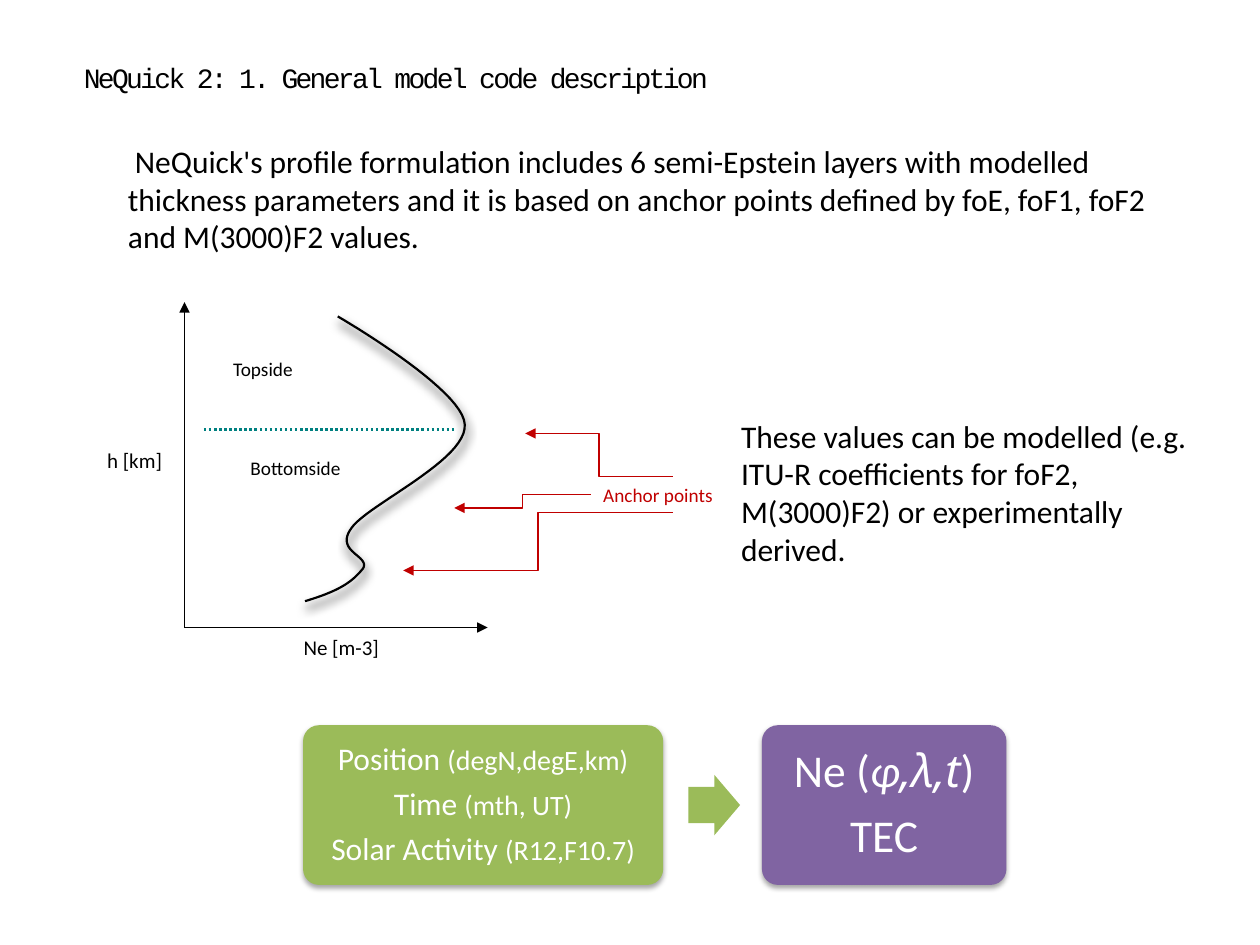
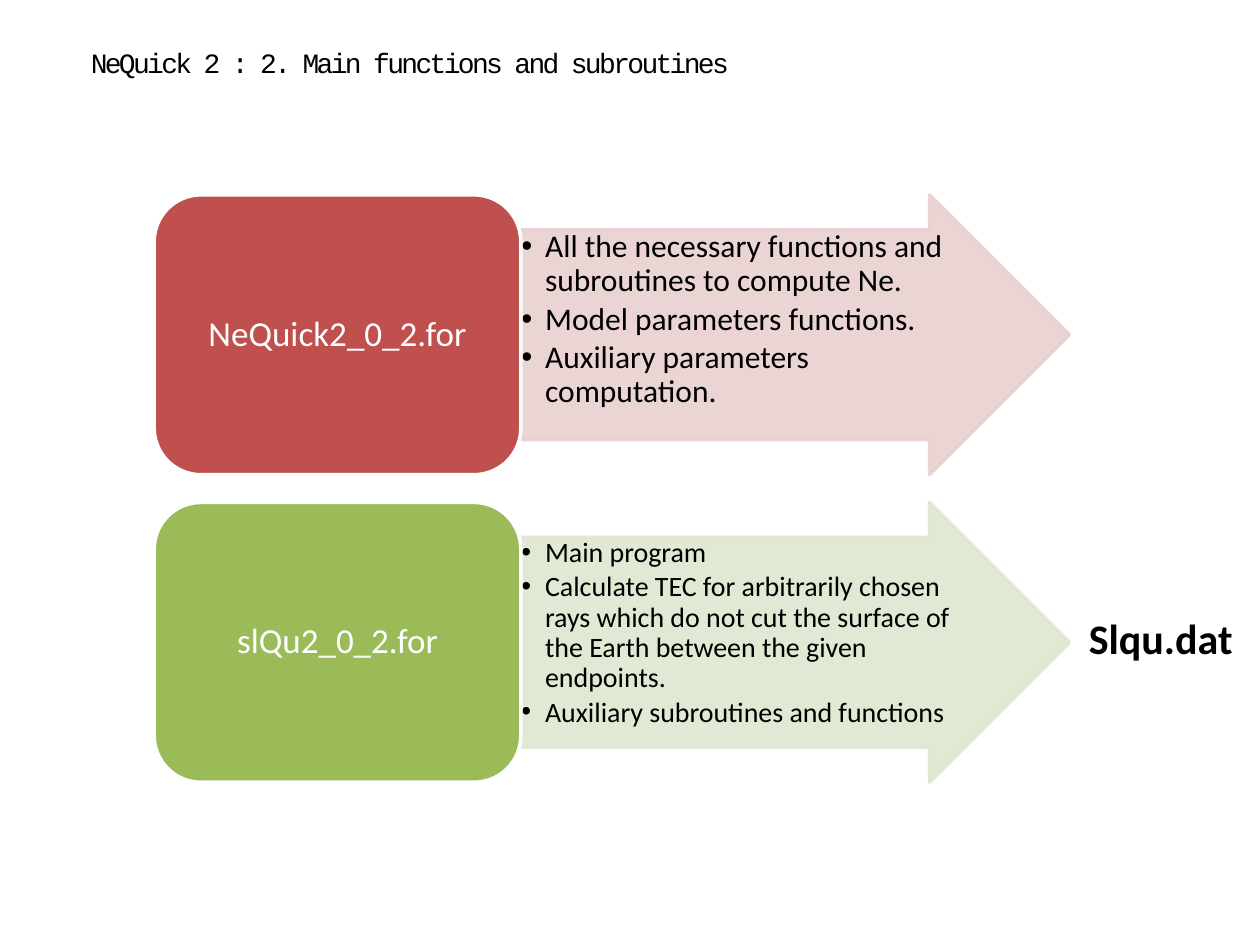
import pptx
import pptx.dml.color
import pptx.enum.dml
import pptx.enum.shapes
import pptx.enum.text
import pptx.oxml
import pptx.oxml.ns
import pptx.util

Cm, Pt = pptx.util.Cm, pptx.util.Pt
SHAPES = pptx.enum.shapes.MSO_SHAPE
CONNECTORS = pptx.enum.shapes.MSO_CONNECTOR
ANCHORS = pptx.enum.text.MSO_ANCHOR
ALIGNMENTS = pptx.enum.text.PP_ALIGN
COLOURS = {
    "black": "000000", "white": "FFFFFF", "anchor": "C00000", "divider": "008080",
    "green": "9BBB59", "purple": "8064A2", "red": "C0504D",
    "pale red": "E8D0D0", "pale green": "DEE7D1",
}
TEXT_INSETS = (0.25, 0.13, 0.25, 0.13)
TITLE_ONLY = 5


def rgb(colour):
    return pptx.dml.color.RGBColor.from_string(COLOURS[colour])


def add_xml(parent, tag, **attributes):
    child = parent.makeelement(pptx.oxml.ns.qn(tag), {})
    for name, value in attributes.items():
        child.set(name, str(value))
    parent.append(child)
    return child


def write(frame, paragraphs, size=18, colour="black", font="Calibri", bold=None,
          align="LEFT", anchor="TOP", insets=TEXT_INSETS, wrap=True, spacing=None,
          after=0, first_indent=0, bullet=False, tracking=None):
    """Fill a text frame; a paragraph is a string or a list of (text, run format) pairs."""
    frame.word_wrap = wrap
    frame.auto_size = pptx.enum.text.MSO_AUTO_SIZE.NONE
    frame.vertical_anchor = ANCHORS[anchor]
    frame.margin_left, frame.margin_top, frame.margin_right, frame.margin_bottom = map(Cm, insets)
    for index, content in enumerate(paragraphs):
        paragraph = frame.add_paragraph() if index else frame.paragraphs[0]
        properties = paragraph._p.get_or_add_pPr()
        if bullet:
            properties.set("marL", str(Cm(0.48)))
            properties.set("indent", str(Cm(-0.48)))
            add_xml(properties, "a:buFont", typeface="Arial")
            add_xml(properties, "a:buChar", char="•")
        elif first_indent:
            properties.set("indent", str(Cm(first_indent)))
        paragraph.alignment = ALIGNMENTS[align]
        paragraph.space_before = Pt(0)
        paragraph.space_after = Pt(after)
        if spacing:
            paragraph.line_spacing = spacing
        for text, run_format in [(content, {})] if isinstance(content, str) else content:
            run = paragraph.add_run()
            run.text = text
            run.font.name = run_format.get("font", font)
            run.font.size = Pt(run_format.get("size", size))
            run.font.italic = run_format.get("italic")
            run.font.bold = bold
            run.font.color.rgb = rgb(colour)
            if tracking:
                run._r.get_or_add_rPr().set("spc", str(tracking))


def add_titled_slide(presentation, title, left, top, width, **text_format):
    slide = presentation.slides.add_slide(presentation.slide_layouts[TITLE_ONLY])
    shape = slide.shapes.title
    shape.left, shape.top, shape.width, shape.height = map(Cm, (left, top, width, 1.63))
    write(shape.text_frame, [title], size=16, font="Courier New", tracking=-150, **text_format)
    return slide


def add_label(slide, paragraphs, left, top, width, height, **text_format):
    box = slide.shapes.add_textbox(*map(Cm, (left, top, width, height)))
    write(box.text_frame, paragraphs, **text_format)


def add_shadow(shape, blur, distance, direction, opacity):
    shape.shadow.inherit = False
    effects = shape._element.spPr.find(pptx.oxml.ns.qn("a:effectLst"))
    shadow = add_xml(effects, "a:outerShdw", blurRad=Pt(blur), dist=Pt(distance),
                     dir=direction * 60000, algn="ctr", rotWithShape=0)
    colour = add_xml(shadow, "a:srgbClr", val=COLOURS["black"])
    add_xml(colour, "a:alpha", val=opacity * 1000)


def add_block(slide, kind, left, top, width, height, fill, outline=None,
              adjustments=(), opacity=None):
    shape = slide.shapes.add_shape(kind, *map(Cm, (left, top, width, height)))
    shape.shadow.inherit = False
    for index, value in enumerate(adjustments):
        shape.adjustments[index] = value
    shape.fill.solid()
    shape.fill.fore_color.rgb = rgb(fill)
    if outline:
        shape.line.color.rgb = rgb(outline)
        shape.line.width = Pt(2)
    else:
        shape.line.fill.background()
    if opacity:
        for colour in shape._element.spPr.iter(pptx.oxml.ns.qn("a:srgbClr")):
            add_xml(colour, "a:alpha", val=opacity * 1000)
    return shape


def add_line(slide, start, end, colour="black", width=0.75, kind=CONNECTORS.STRAIGHT,
             arrow=True):
    connector = slide.shapes.add_connector(kind, *map(Cm, start + end))
    connector.line.color.rgb = rgb(colour)
    connector.line.width = Pt(width)
    if arrow:
        add_xml(connector.line._get_or_add_ln(), "a:tailEnd", type="triangle")
    add_xml(connector._element.spPr, "a:effectLst")
    return connector


def bezier_points(points, steps=24):
    """Sample a chain of cubic curves given as a start and three points per curve."""
    for first in range(0, len(points) - 1, 3):
        controls = points[first:first + 4]
        for step in range(1, steps + 1):
            t = step / steps
            weights = ((1 - t) ** 3, 3 * t * (1 - t) ** 2, 3 * t ** 2 * (1 - t), t ** 3)
            yield tuple(Cm(sum(weight * point[axis] for weight, point in zip(weights, controls)))
                        for axis in (0, 1))


def add_profile_curve(slide):
    points = [(6.15, 12.12), (6.93, 11.89), (7.14, 11.68), (7.32, 11.46),
              (7.47, 11.2), (6.73, 11.13), (7.09, 10.64),
              (7.44, 10.16), (9.42, 9.27), (9.37, 8.56),
              (9.35, 7.85), (6.81, 6.38), (6.81, 6.38)]
    builder = slide.shapes.build_freeform(*map(Cm, points[0]))
    builder.add_line_segments(list(bezier_points(points)), close=False)
    curve = builder.convert_to_shape()
    curve.fill.background()
    curve.line.color.rgb = rgb("black")
    curve.line.width = Pt(1.25)
    add_shadow(curve, 6, 4, 79, opacity=100)


def add_profile_diagram(slide):
    add_profile_curve(slide)
    for start, end in (((13.56, 9.61), (10.59, 8.74)),
                       ((11.91, 9.97), (9.16, 10.24)),
                       ((13.56, 10.33), (8.13, 11.5))):
        add_line(slide, start, end, "anchor", kind=CONNECTORS.ELBOW)
    origin = (3.72, 12.65)
    for axis_end in ((3.72, 6.09), (9.83, 12.65)):
        add_line(slide, origin, axis_end)
    divider = add_line(slide, (4.11, 8.66), (9.19, 8.66), "divider", 1.45, arrow=False)
    divider.line.dash_style = pptx.enum.dml.MSO_LINE.ROUND_DOT
    add_label(slide, ["h [km]"], 1.91, 8.89, 1.98, 0.76, size=12)
    add_label(slide, ["Ne [m-3]"], 5.87, 12.67, 2.69, 0.76, size=12)
    add_label(slide, ["Topside"], 4.45, 7.07, 2.44, 0.71, size=11)
    add_label(slide, ["Bottomside"], 4.8, 9.07, 2.51, 0.71, size=11)
    add_label(slide, ["Anchor points"], 11.91, 9.61, 3.33, 0.71, size=11, colour="anchor")


def add_model_box(slide, left, width, fill, paragraphs, inset, **text_format):
    box = add_block(slide, SHAPES.ROUNDED_RECTANGLE, left, 14.62, width, 3.22, fill,
                    adjustments=[0.1])
    add_shadow(box, 3.1, 1.8, 90, opacity=35)
    write(box.text_frame, paragraphs, colour="white", align="CENTER", anchor="MIDDLE",
          insets=(inset,) * 4, spacing=0.9, **text_format)


def add_file_row(slide, top, file_name, fill, pale_fill, bullets, size):
    add_block(slide, SHAPES.RIGHT_ARROW, 10.49, top, 11.07, 5.64, pale_fill,
              pale_fill, adjustments=[0.75, 0.5], opacity=90)
    add_label(slide, bullets, 10.48, top + 0.69, 8.97, 4.23, size=size, bullet=True,
              spacing=0.9, after=2.5, insets=(0.03,) * 4)
    box = add_block(slide, SHAPES.ROUNDED_RECTANGLE, 3.11, top, 7.39, 5.64, fill, "white")
    write(box.text_frame, [file_name], size=20, colour="white", align="CENTER",
          anchor="MIDDLE", insets=(0.2, 0.1, 0.2, 0.1), spacing=0.9)


def build_description_slide(presentation):
    slide = add_titled_slide(presentation, "NeQuick 2: 1. General model code description",
                             0.58, 0.75, 14.71, anchor="MIDDLE", insets=(1.11, 0.13, 0.25, 0.13))
    add_label(slide, ["NeQuick's profile formulation includes 6 semi-Epstein layers with "
                      "modelled thickness parameters and it is based on anchor points defined "
                      "by foE, foF1, foF2 and M(3000)F2 values."],
              2.33, 2.73, 21.16, 2.54, first_indent=0.14)
    add_label(slide, ["These values can be modelled (e.g. ITU-R coefficients for foF2, "
                      "M(3000)F2) or experimentally derived."], 14.69, 8.27, 9.73, 3.3)
    add_profile_diagram(slide)
    inputs = (("Position ", "(degN,degE,km)"), ("Time ", "(mth, UT)"),
              ("Solar Activity ", "(R12,F10.7)"))
    add_model_box(slide, 6.11, 7.26, "green",
                  [[(name, {}), (unit, {"size": 16})] for name, unit in inputs], 0.18, after=6.3)
    add_block(slide, SHAPES.RIGHT_ARROW, 13.88, 15.62, 1.04, 1.22, "green",
              adjustments=[0.6, 0.5])
    density = [("Ne (", {}), ("φ", {"italic": True}),
               (",λ,t", {"italic": True, "font": "Noto Sans"}), (")", {})]
    add_model_box(slide, 15.36, 4.93, "purple", [density, "TEC"], 0.28, size=26, after=9.1)


def build_functions_slide(presentation):
    slide = add_titled_slide(presentation, "NeQuick 2 : 2. Main functions and subroutines",
                             1.58, 0.78, 13.54)
    add_file_row(slide, 3.93, "NeQuick2_0_2.for", "red", "pale red",
                 ["All the necessary functions and subroutines to compute Ne.",
                  "Model parameters functions.",
                  "Auxiliary parameters computation."], 18)
    add_file_row(slide, 10.13, "slQu2_0_2.for", "green", "pale green",
                 ["Main program",
                  "Calculate TEC for arbitrarily chosen rays which do not cut the surface "
                  "of the Earth between the given endpoints.",
                  "Auxiliary subroutines and functions"], 16)
    add_label(slide, ["Slqu.dat"], 21.7, 12.22, 3.45, 1.27, size=24, bold=True, wrap=False)


def main():
    presentation = pptx.Presentation()
    presentation.slide_width, presentation.slide_height = Cm(25.4), Cm(19.05)
    build_description_slide(presentation)
    build_functions_slide(presentation)
    presentation.save("out.pptx")


if __name__ == "__main__":
    main()
